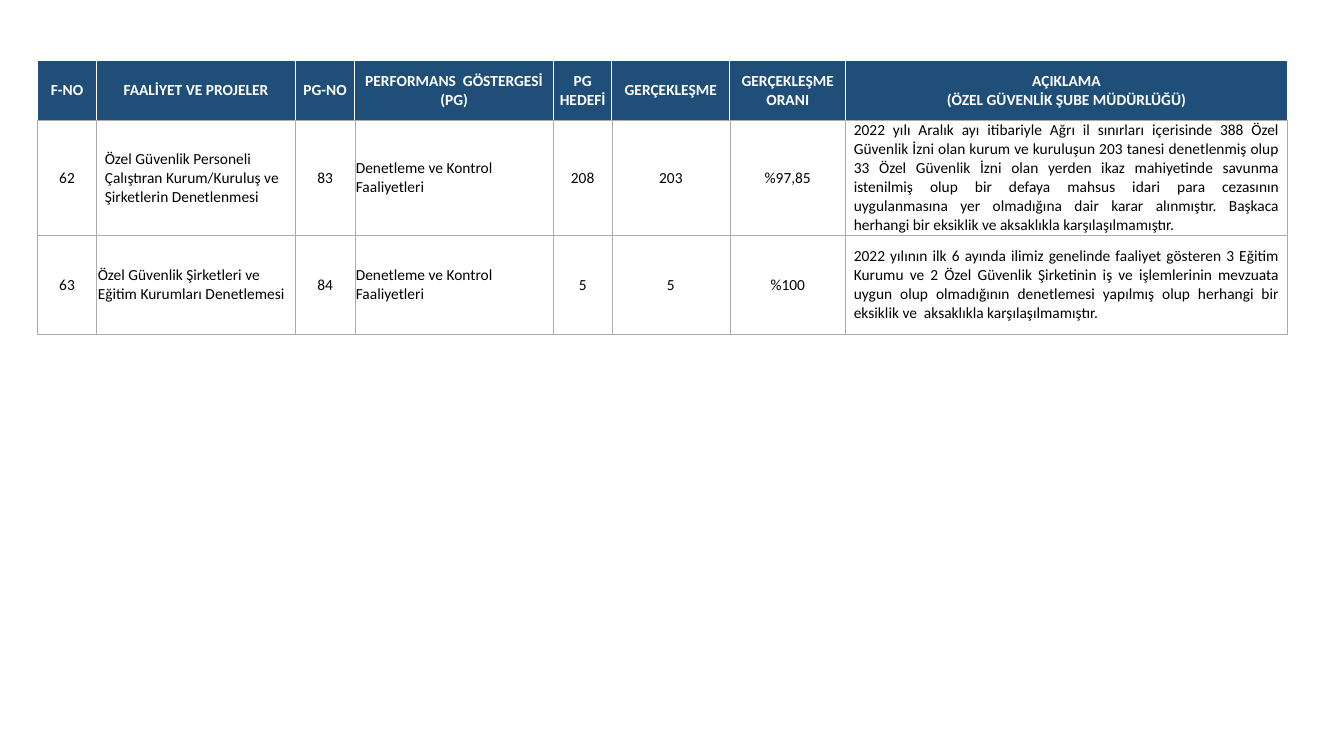
from lxml.etree import SubElement
from pptx import Presentation
from pptx.dml.color import RGBColor
from pptx.enum.text import MSO_ANCHOR, PP_ALIGN
from pptx.oxml.ns import qn
from pptx.util import Inches, Pt

# Content: each cell holds its paragraphs; "\n" is a line break
HEAD = ["F-NO", "FAALİYET VE PROJELER", "PG-NO", "PERFORMANS  GÖSTERGESİ (PG)",
        "PG\nHEDEFİ", "GERÇEKLEŞME", "GERÇEKLEŞME ORANI",
        ("AÇIKLAMA", "(ÖZEL GÜVENLİK ŞUBE MÜDÜRLÜĞÜ)")]
BODY = [
    ["62", "Özel Güvenlik Personeli Çalıştıran Kurum/Kuruluş ve Şirketlerin Denetlenmesi",
     "83", "Denetleme ve Kontrol Faaliyetleri", "208", "203", "%97,85",
     "2022 yılı Aralık ayı itibariyle Ağrı il sınırları içerisinde 388 Özel Güvenlik "
     "İzni olan kurum ve kuruluşun 203 tanesi denetlenmiş olup 33 Özel Güvenlik İzni "
     "olan yerden ikaz mahiyetinde savunma istenilmiş olup bir defaya mahsus idari para "
     "cezasının uygulanmasına yer olmadığına dair karar alınmıştır. Başkaca herhangi "
     "bir eksiklik ve aksaklıkla karşılaşılmamıştır."],
    ["63", "Özel Güvenlik Şirketleri ve Eğitim Kurumları Denetlemesi",
     "84", "Denetleme ve Kontrol Faaliyetleri", "5", "5", "%100",
     "2022 yılının ilk 6 ayında ilimiz genelinde faaliyet gösteren 3 Eğitim Kurumu ve "
     "2 Özel Güvenlik Şirketinin iş ve işlemlerinin mevzuata uygun olup olmadığının "
     "denetlemesi yapılmış olup herhangi bir eksiklik ve  aksaklıkla karşılaşılmamıştır."],
]

# Layout in inches
LEFT, TOP = 0.37, 0.6
COLS = [0.59, 1.97, 0.59, 1.97, 0.58, 1.17, 1.15, 4.38]
ROWS = [0.59, 0.98, 0.98]
SLIM, WIDE = 0.01, 0.08
PADS = [[SLIM] * 8,
        [SLIM, WIDE, WIDE, SLIM] + [WIDE] * 4,
        [SLIM] * 4 + [WIDE] * 4]
MID, LOW, FULL = PP_ALIGN.CENTER, PP_ALIGN.LEFT, PP_ALIGN.JUSTIFY
ALIGN = [MID, LOW, MID, LOW, MID, MID, MID, FULL]
NAVY, WHITE, GREY, BLACK = "1F4E79", "FFFFFF", "AFABAB", "000000"


def color(code):
    return RGBColor.from_string(code)


def edge(cell, side, code, width):
    line = SubElement(cell._tc.get_or_add_tcPr(), qn(f"a:ln{side}"), w=str(Pt(width)))
    fill = SubElement(line, qn("a:solidFill"))
    SubElement(fill, qn("a:srgbClr"), val=code)


def write(cell, text, align, code, bold):
    parts = (text,) if isinstance(text, str) else text
    frame = cell.text_frame
    for i, part in enumerate(parts):
        para = frame.add_paragraph() if i else frame.paragraphs[0]
        para.alignment = align
        for j, piece in enumerate(part.split("\n")):
            if j:
                para.add_line_break()
            run = para.add_run()
            run.text = piece
            font = run.font
            font.name, font.size, font.bold = "Calibri", Pt(11), bold
            font.color.rgb = color(code)


def style(cell, head, pad):
    cell.vertical_anchor = MSO_ANCHOR.MIDDLE
    cell.margin_left = cell.margin_right = Inches(pad)
    cell.margin_top, cell.margin_bottom = Inches(0.01), 0
    # Borders come before the fill
    for side in "LRTB":
        if head and side != "B":
            edge(cell, side, WHITE, 1)
        else:
            edge(cell, side, GREY, 0.5 if side in "LR" else 0.25)
    if head:
        cell.fill.solid()
        cell.fill.fore_color.rgb = color(NAVY)
    else:
        cell.fill.background()


def main():
    deck = Presentation()
    deck.slide_width, deck.slide_height = Inches(13.33), Inches(7.5)
    slide = deck.slides.add_slide(deck.slide_layouts[6])

    # Table grid
    table = slide.shapes.add_table(
        len(ROWS), len(COLS), Inches(LEFT), Inches(TOP),
        Inches(sum(COLS)), Inches(sum(ROWS))).table
    table.first_row = table.horz_banding = False
    for col, width in zip(table.columns, COLS):
        col.width = Inches(width)
    for row, height in zip(table.rows, ROWS):
        row.height = Inches(height)

    # Cells
    for r, texts in enumerate([HEAD] + BODY):
        head = r == 0
        for c, text in enumerate(texts):
            cell = table.cell(r, c)
            style(cell, head, PADS[r][c])
            write(cell, text, MID if head else ALIGN[c], WHITE if head else BLACK, head)

    deck.save("out.pptx")


if __name__ == "__main__":
    main()
